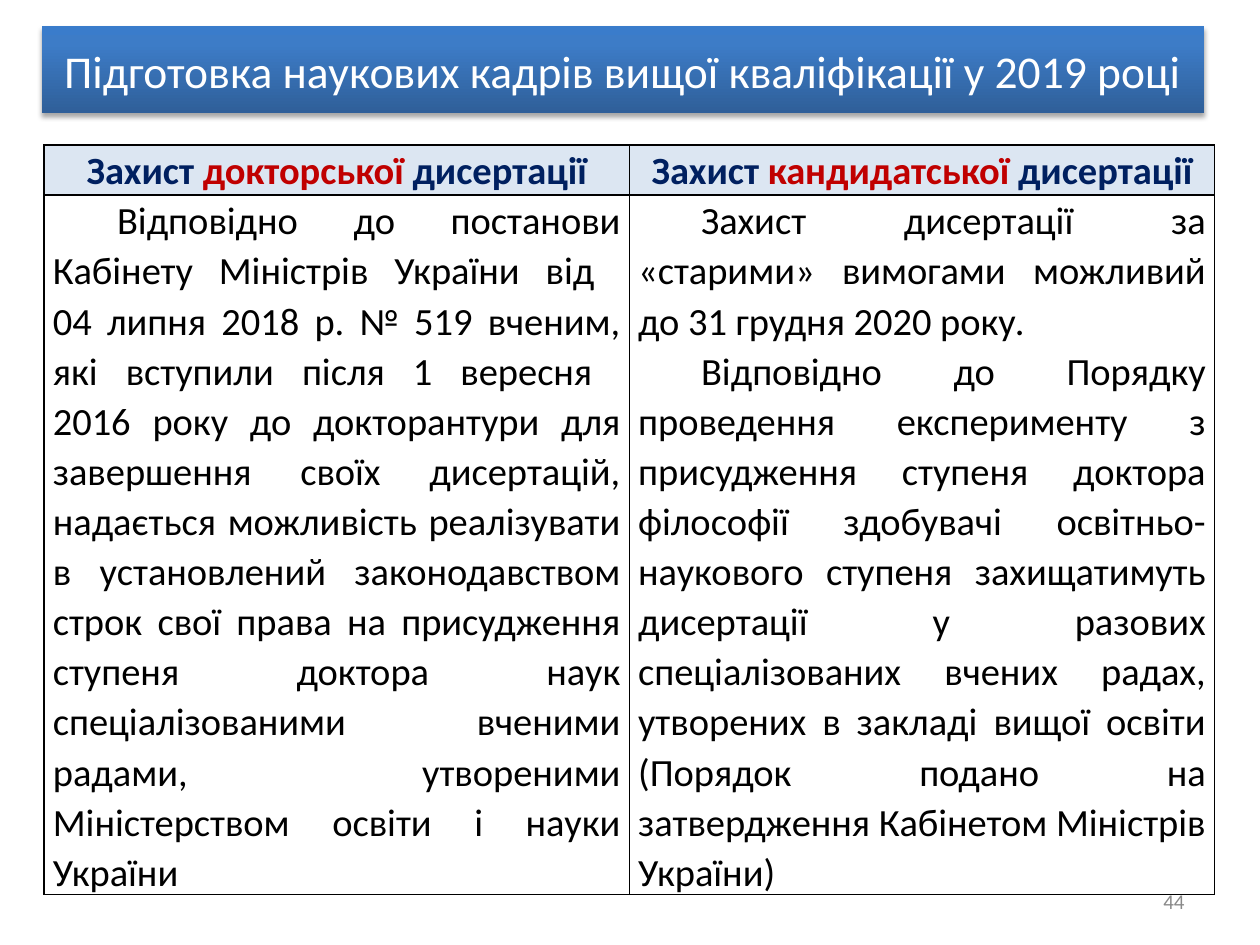
"""Build the slide on thesis defence rules for 2019."""
from dataclasses import dataclass
from typing import NamedTuple

from pptx import Presentation
from pptx.dml.color import RGBColor
from pptx.enum.shapes import MSO_SHAPE
from pptx.enum.text import MSO_ANCHOR, PP_ALIGN
from pptx.oxml import parse_xml
from pptx.oxml.ns import nsdecls
from pptx.util import Inches, Pt

WIDTH, HEIGHT = Inches(10), Inches(7.5)


@dataclass(frozen=True)
class Theme:
    """Colours, font and type sizes of the slide."""
    font: str = "Calibri"
    title_size: int = 26
    table_size: int = 22
    number_size: int = 12
    white: str = "FFFFFF"
    black: str = "000000"
    navy: str = "002060"
    red: str = "C00000"
    grey: str = "898989"
    header_fill: str = "DCE6F2"
    gradient: tuple = ((0, "2F5F99"), (80, "3D7CC7"), (100, "3A7CCB"))


class Box(NamedTuple):
    """A rectangle in percent of the slide's size."""
    left: float
    top: float
    width: float
    height: float

    def lengths(self) -> tuple:
        """Return left, top, width and height as lengths."""
        return (int(WIDTH * self.left / 100), int(HEIGHT * self.top / 100),
                int(WIDTH * self.width / 100), int(HEIGHT * self.height / 100))


class Column(NamedTuple):
    """A table column: heading words, body paragraphs and their indent in inches."""
    heading: tuple
    body: tuple
    indent: float


THEME = Theme()
TITLE_BOX = Box(3.3, 2.8, 92.3, 9.2)
TABLE_BOX = Box(3.5, 15.33, 92.9, 79.33)
NUMBER_BOX = Box(71.7, 92.67, 23.3, 5.33)
HEADER_SHARE = 0.067
TITLE = "Підготовка наукових кадрів вищої кваліфікації у 2019 році"
COLUMNS = (
    Column(
        ("Захист ", "докторської", " дисертації"),
        ("Відповідно до постанови Кабінету Міністрів України від \n"
         "04 липня 2018 р. № 519 вченим, які вступили після 1 вересня \n"
         "2016 року до докторантури для завершення своїх дисертацій, надається "
         "можливість реалізувати в установлений законодавством строк свої права "
         "на присудження ступеня доктора наук спеціалізованими вченими радами, "
         "утвореними Міністерством освіти і науки України",),
        0.51),
    Column(
        ("Захист ", "кандидатської ", "дисертації"),
        ("Захист дисертації за «старими» вимогами можливий до 31 грудня 2020 року.",
         "Відповідно до Порядку проведення експерименту з присудження ступеня "
         "доктора філософії здобувачі освітньо-наукового ступеня захищатимуть "
         "дисертації у разових спеціалізованих вчених радах, утворених в закладі "
         "вищої освіти (Порядок подано на затвердження Кабінетом Міністрів України)"),
        0.5),
)


def add_text(paragraph, text: str, *, size: int, color: str, bold: bool = False,
             align=PP_ALIGN.LEFT, spacing: float = 1.0, indent: float = 0) -> None:
    """Append formatted text to a paragraph, with a line break at each newline."""
    paragraph.alignment = align
    paragraph.line_spacing = spacing
    if indent:
        properties = paragraph._p.get_or_add_pPr()
        properties.set("marL", "0")
        properties.set("indent", str(Inches(indent)))
    for position, line in enumerate(text.split("\n")):
        if position:
            paragraph.add_line_break()
        run = paragraph.add_run()
        run.text = line
        run.font.name = THEME.font
        run.font.size = Pt(size)
        run.font.bold = bold
        run.font.color.rgb = RGBColor.from_string(color)


def add_number(slide, box: Box, text: str) -> None:
    """Draw the slide number."""
    frame = slide.shapes.add_textbox(*box.lengths()).text_frame
    frame.word_wrap = True
    frame.vertical_anchor = MSO_ANCHOR.MIDDLE
    add_text(frame.paragraphs[0], text, size=THEME.number_size, color=THEME.grey,
             align=PP_ALIGN.RIGHT)


def add_title(slide, box: Box, text: str) -> None:
    """Draw the title bar with its gradient and shadow."""
    shape = slide.shapes.add_shape(MSO_SHAPE.RECTANGLE, *box.lengths())
    shape.line.fill.background()
    shape.shadow.inherit = False
    stops = "".join(f'<a:gs pos="{position * 1000}"><a:srgbClr val="{color}"/></a:gs>'
                    for position, color in THEME.gradient)
    properties = shape._element.spPr
    properties.ln.addprevious(parse_xml(
        f'<a:gradFill {nsdecls("a")} rotWithShape="1"><a:gsLst>{stops}</a:gsLst>'
        f'<a:lin ang="{270 * 60000}" scaled="0"/></a:gradFill>'))
    properties.find("{*}effectLst").append(parse_xml(
        f'<a:outerShdw {nsdecls("a")} blurRad="{Pt(3.1)}" dist="{Pt(1.8)}" '
        f'dir="{90 * 60000}" rotWithShape="0"><a:srgbClr val="{THEME.black}">'
        '<a:alpha val="35000"/></a:srgbClr></a:outerShdw>'))
    frame = shape.text_frame
    frame.word_wrap = True
    frame.vertical_anchor = MSO_ANCHOR.MIDDLE
    add_text(frame.paragraphs[0], text, size=THEME.title_size, color=THEME.white,
             align=PP_ALIGN.CENTER)


def format_cell(cell, fill: str | None, anchor) -> None:
    """Set the fill, margins, anchor and borders of a cell."""
    cell.margin_left = cell.margin_right = Inches(0.07)
    cell.margin_top = cell.margin_bottom = 0
    cell.vertical_anchor = anchor
    if fill:
        cell.fill.solid()
        cell.fill.fore_color.rgb = RGBColor.from_string(fill)
    else:
        cell.fill.background()
    properties = cell._tc.get_or_add_tcPr()
    for position, side in enumerate("LRTB"):
        properties.insert(position, parse_xml(
            f'<a:ln{side} {nsdecls("a")} w="{Pt(1)}"><a:solidFill>'
            f'<a:srgbClr val="{THEME.black}"/></a:solidFill></a:ln{side}>'))


def add_comparison(slide, box: Box, columns: tuple) -> None:
    """Draw the table with one heading and one body cell for each column."""
    left, top, width, height = box.lengths()
    table = slide.shapes.add_table(2, len(columns), left, top, width, height).table
    table.first_row = table.horz_banding = False
    table.rows[0].height = int(height * HEADER_SHARE)
    table.rows[1].height = height - table.rows[0].height
    for index, column in enumerate(columns):
        table.columns[index].width = width // len(columns)
        header, body = table.cell(0, index), table.cell(1, index)
        format_cell(header, THEME.header_fill, MSO_ANCHOR.MIDDLE)
        format_cell(body, None, MSO_ANCHOR.TOP)
        for words, color in zip(column.heading, (THEME.navy, THEME.red, THEME.navy)):
            add_text(header.text_frame.paragraphs[0], words, size=THEME.table_size,
                     color=color, bold=True, align=PP_ALIGN.CENTER, spacing=1.07)
        frame = body.text_frame
        for position, text in enumerate(column.body):
            paragraph = frame.add_paragraph() if position else frame.paragraphs[0]
            add_text(paragraph, text, size=THEME.table_size, color=THEME.black,
                     align=PP_ALIGN.JUSTIFY, spacing=1.07, indent=column.indent)


def main() -> None:
    """Build and save the presentation."""
    presentation = Presentation()
    presentation.slide_width, presentation.slide_height = WIDTH, HEIGHT
    slide = presentation.slides.add_slide(presentation.slide_layouts[6])
    add_number(slide, NUMBER_BOX, "44")
    add_comparison(slide, TABLE_BOX, COLUMNS)
    add_title(slide, TITLE_BOX, TITLE)
    presentation.save("out.pptx")


if __name__ == "__main__":
    main()
